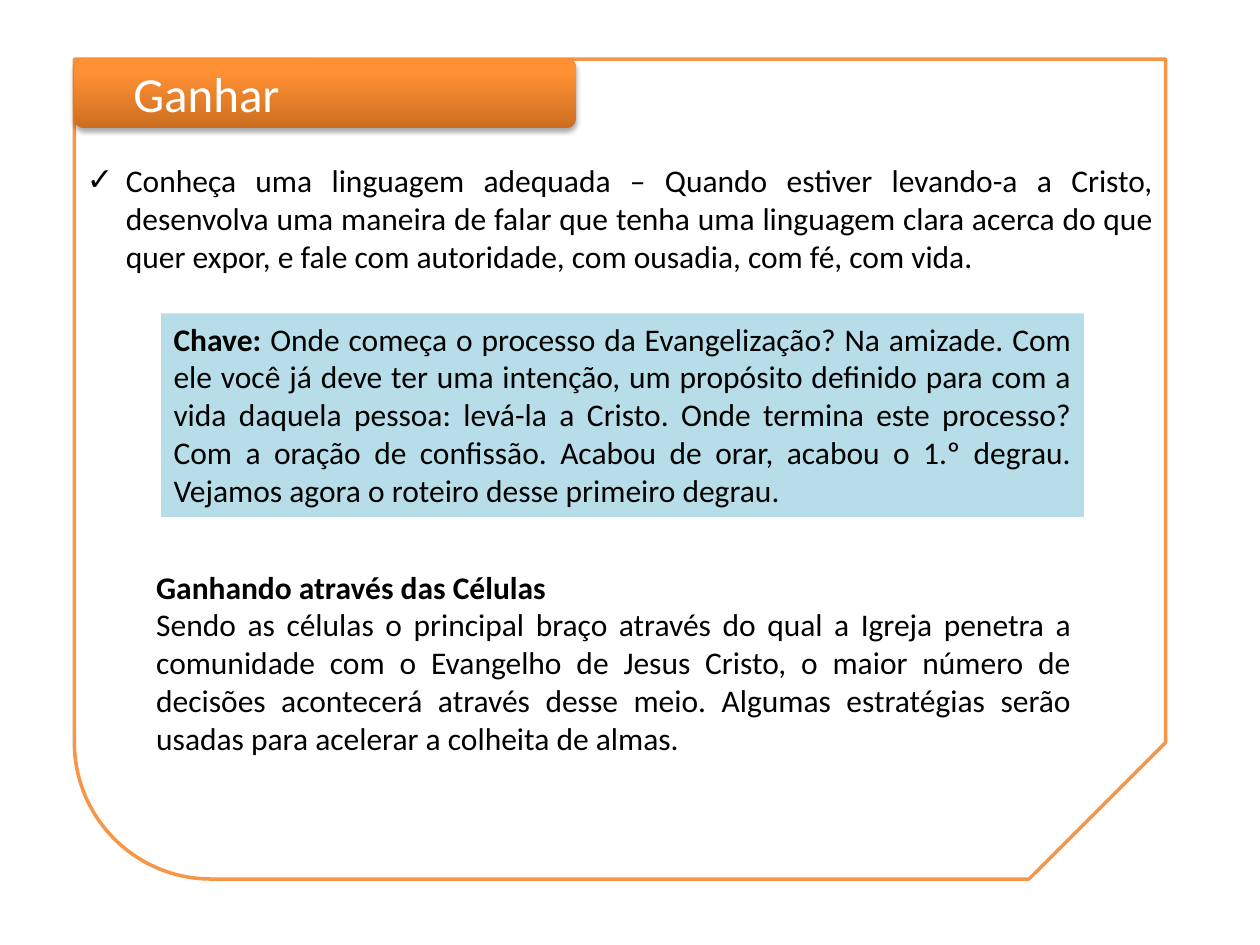
from lxml import etree
from pptx import Presentation
from pptx.dml.color import RGBColor
from pptx.enum import shapes, text
from pptx.oxml import ns
from pptx.util import Cm, Pt

ORANGE = RGBColor(0xF7, 0x96, 0x46)
DARK = RGBColor(0xCC, 0x6E, 0x20)
BRIGHT = RGBColor(0xFF, 0x90, 0x34)
BLUE = RGBColor(0xB7, 0xDE, 0xE8)
BLACK = RGBColor(0, 0, 0)
WHITE = RGBColor(255, 255, 255)

LEFT, WIDTH = 1.5, 22
KIND = shapes.MSO_SHAPE

LANGUAGE = (
    "Conheça uma linguagem adequada – Quando estiver levando-a a Cristo, "
    "desenvolva uma maneira de falar que tenha uma linguagem clara acerca do "
    "que quer expor, e fale com autoridade, com ousadia, com fé, com vida."
)
KEY = (
    "Onde começa o processo da Evangelização? Na amizade. Com ele você já deve "
    "ter uma intenção, um propósito definido para com a vida daquela pessoa: "
    "levá-la a Cristo. Onde termina este processo? Com a oração de confissão. "
    "Acabou de orar, acabou o 1.º degrau. Vejamos agora o roteiro desse "
    "primeiro degrau."
)
CELLS = (
    "Sendo as células o principal braço através do qual a Igreja penetra a "
    "comunidade com o Evangelho de Jesus Cristo, o maior número de decisões "
    "acontecerá através desse meio. Algumas estratégias serão usadas para "
    "acelerar a colheita de almas."
)


def add_node(parent, tag, **attrs):
    return etree.SubElement(parent, ns.qn(tag), attrs)


def add_run(para, words, size=18, bold=False, color=BLACK):
    run = para.add_run()
    run.text = words
    font = run.font
    font.name, font.size, font.bold = "Calibri", Pt(size), bold
    font.color.rgb = color


def add_shape(slide, kind, *box):
    shape = slide.shapes.add_shape(kind, *map(Cm, box))
    shape.shadow.inherit = False
    shape.line.fill.background()
    return shape


def add_frame(slide):
    """Outline with a round corner bottom left and a cut one bottom right."""
    frame = add_shape(slide, KIND.SNIP_ROUND_RECTANGLE, LEFT, 1.19, WIDTH, 16.53)
    frame.fill.background()
    frame.line.color.rgb = ORANGE
    frame.line.width = Pt(2)
    frame.rotation = 180
    frame._element.spPr.xfrm.set("flipH", "1")


def add_shade(shape):
    """Soft shadow that falls straight down."""
    effects = shape._element.spPr.find(ns.qn("a:effectLst"))
    shade = add_node(effects, "a:outerShdw", blurRad=str(Pt(3.1)),
                     dist=str(Pt(1.8)), dir="5400000", rotWithShape="0")
    tint = add_node(shade, "a:srgbClr", val="000000")
    add_node(tint, "a:alpha", val="35000")


def add_title(slide, words):
    bar = add_shape(slide, KIND.ROUNDED_RECTANGLE, LEFT, 1.17, 10.11, 1.42)
    bar.adjustments[0] = 0.14
    bar.fill.gradient()
    bar.fill.gradient_angle = 90
    stops = bar.fill.gradient_stops
    for stop, place, color in zip(stops, (0, 0.8), (DARK, BRIGHT)):
        stop.position = place
        stop.color.rgb = color
    add_shade(bar)
    frame = bar.text_frame
    frame.margin_left = Cm(1.13)
    frame.vertical_anchor = text.MSO_ANCHOR.MIDDLE
    para = frame.paragraphs[0]
    para.alignment = text.PP_ALIGN.LEFT
    add_run(para, words, size=28, color=WHITE)


def add_paras(shape, *paras):
    """Fill a shape with justified paragraphs of (words, bold) runs."""
    frame = shape.text_frame
    frame.word_wrap = True
    frame.vertical_anchor = text.MSO_ANCHOR.TOP
    for index, runs in enumerate(paras):
        para = frame.add_paragraph() if index else frame.paragraphs[0]
        para.alignment = text.PP_ALIGN.JUSTIFY
        for words, bold in runs:
            add_run(para, words, bold=bold)


def add_text(slide, box, *paras):
    shape = slide.shapes.add_textbox(*map(Cm, box))
    add_paras(shape, *paras)
    return shape


def add_tick(para):
    """Hang a check mark in front of the paragraph."""
    props = para._p.get_or_add_pPr()
    props.set("marL", str(Cm(0.79)))
    props.set("indent", str(-Cm(0.79)))
    add_node(props, "a:buFont", typeface="Calibri")
    add_node(props, "a:buChar", char="✓")


def main():
    deck = Presentation()
    deck.slide_width, deck.slide_height = Cm(25.4), Cm(19.05)
    slide = deck.slides.add_slide(deck.slide_layouts[6])

    add_frame(slide)
    add_title(slide, "Ganhar")

    advice = add_text(slide, (LEFT, 3.12, WIDTH, 2.57), [(LANGUAGE, False)])
    add_tick(advice.text_frame.paragraphs[0])

    panel = add_shape(slide, KIND.RECTANGLE, 3.25, 6.32, 18.6, 4.1)
    panel.fill.solid()
    panel.fill.fore_color.rgb = BLUE
    add_paras(panel, [("Chave: ", True), (KEY, False)])

    add_text(slide, (2.9, 11.32, 18.95, 5.63),
             [("Ganhando através das Células", True)], [(CELLS, False)])

    deck.save("out.pptx")


if __name__ == "__main__":
    main()
